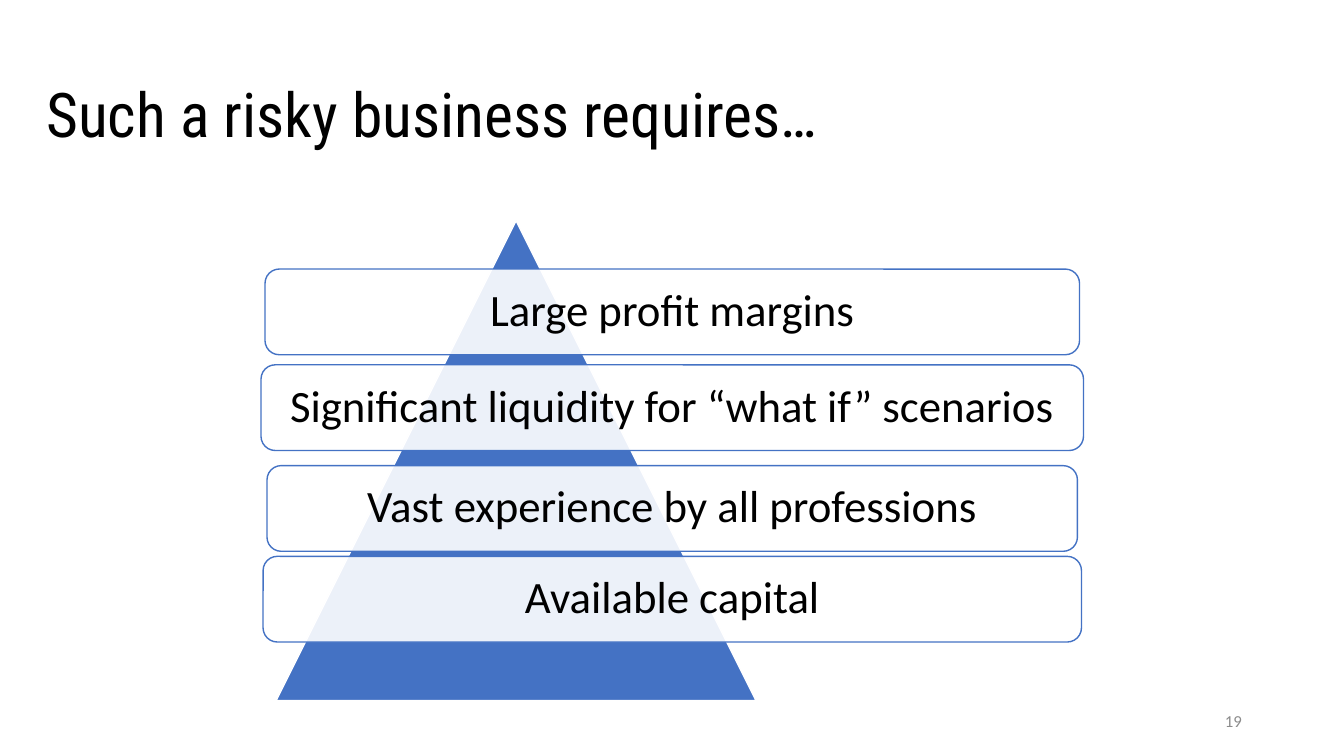
from dataclasses import dataclass

from lxml import etree
from pptx import Presentation
from pptx.dml.color import RGBColor
from pptx.enum.shapes import MSO_SHAPE as Preset
from pptx.enum.text import MSO_ANCHOR as Anchor, PP_ALIGN as Align
from pptx.oxml.ns import qn
from pptx.shapes.autoshape import Shape
from pptx.slide import Slide
from pptx.util import Pt

BLACK = RGBColor(0x00, 0x00, 0x00)
WHITE = RGBColor(0xFF, 0xFF, 0xFF)
BLUE = RGBColor(0x44, 0x72, 0xC4)
GREY = RGBColor(0x8C, 0x8C, 0x8C)

BAR_CENTER = 480.2
BAR_HEIGHT = 61.2
BAR_OPACITY = 90


@dataclass(frozen=True)
class Area:
    left: float
    top: float
    width: float
    height: float

    def lengths(self) -> tuple[Pt, Pt, Pt, Pt]:
        return Pt(self.left), Pt(self.top), Pt(self.width), Pt(self.height)


@dataclass(frozen=True)
class TextStyle:
    font: str
    size: float
    color: RGBColor
    align: Align
    spacing: float = 1.0
    inset_x: float = 7.2
    inset_y: float = 3.6


@dataclass(frozen=True)
class Requirement:
    text: str
    top: float
    width: float

    def area(self) -> Area:
        return Area(BAR_CENTER - self.width / 2, self.top, self.width, BAR_HEIGHT)


TITLE_STYLE = TextStyle("Roboto Condensed", 44, BLACK, Align.LEFT, 0.9)
BAR_STYLE = TextStyle("Calibri", 32, BLACK, Align.CENTER, 0.9, 9.4, 9.4)
NUMBER_STYLE = TextStyle("Calibri", 12, GREY, Align.RIGHT)

REQUIREMENTS = (
    Requirement("Large profit margins", 192.2, 581.8),
    Requirement("Significant liquidity for “what if” scenarios", 260.6, 587.5),
    Requirement("Vast experience by all professions", 332.6, 578.9),
    Requirement("Available capital", 397.4, 584.6),
)


def set_values(target: object, values: dict[str, object]) -> None:
    for name, value in values.items():
        setattr(target, name, value)


def write_text(box: Shape, text: str, style: TextStyle) -> None:
    frame = box.text_frame
    set_values(frame, {
        "word_wrap": True,
        "vertical_anchor": Anchor.MIDDLE,
        "margin_left": Pt(style.inset_x),
        "margin_right": Pt(style.inset_x),
        "margin_top": Pt(style.inset_y),
        "margin_bottom": Pt(style.inset_y),
    })
    para = frame.paragraphs[0]
    set_values(para, {"alignment": style.align, "line_spacing": style.spacing})
    span = para.add_run()
    span.text = text
    set_values(span.font, {"name": style.font, "size": Pt(style.size)})
    span.font.color.rgb = style.color


def add_text(page: Slide, area: Area, text: str, style: TextStyle) -> None:
    write_text(page.shapes.add_textbox(*area.lengths()), text, style)


def add_preset(page: Slide, preset: Preset, area: Area,
               fill: RGBColor, line: RGBColor) -> Shape:
    shape = page.shapes.add_shape(preset, *area.lengths())
    shape.shadow.inherit = False
    shape.fill.solid()
    shape.fill.fore_color.rgb = fill
    shape.line.color.rgb = line
    shape.line.width = Pt(1)
    return shape


def set_opacity(shape: Shape, percent: int) -> None:
    color = shape.fill._xPr.find(qn("a:solidFill")).find(qn("a:srgbClr"))
    etree.SubElement(color, qn("a:alpha"), val=str(percent * 1000))


def add_requirement(page: Slide, requirement: Requirement) -> None:
    bar = add_preset(page, Preset.ROUNDED_RECTANGLE, requirement.area(), WHITE, BLUE)
    set_opacity(bar, BAR_OPACITY)
    write_text(bar, requirement.text, BAR_STYLE)


def main() -> None:
    deck = Presentation()
    set_values(deck, {"slide_width": Pt(960), "slide_height": Pt(540)})
    page = deck.slides.add_slide(deck.slide_layouts[6])
    add_text(page, Area(26, 31.7, 828, 104.4),
             "Such a risky business requires…", TITLE_STYLE)
    add_preset(page, Preset.ISOSCELES_TRIANGLE,
               Area(197.3, 157.7, 342.7, 342.7), BLUE, WHITE)
    for requirement in REQUIREMENTS:
        add_requirement(page, requirement)
    add_text(page, Area(678.2, 500.4, 216, 28.8), "19", NUMBER_STYLE)
    deck.save("out.pptx")


if __name__ == "__main__":
    main()
